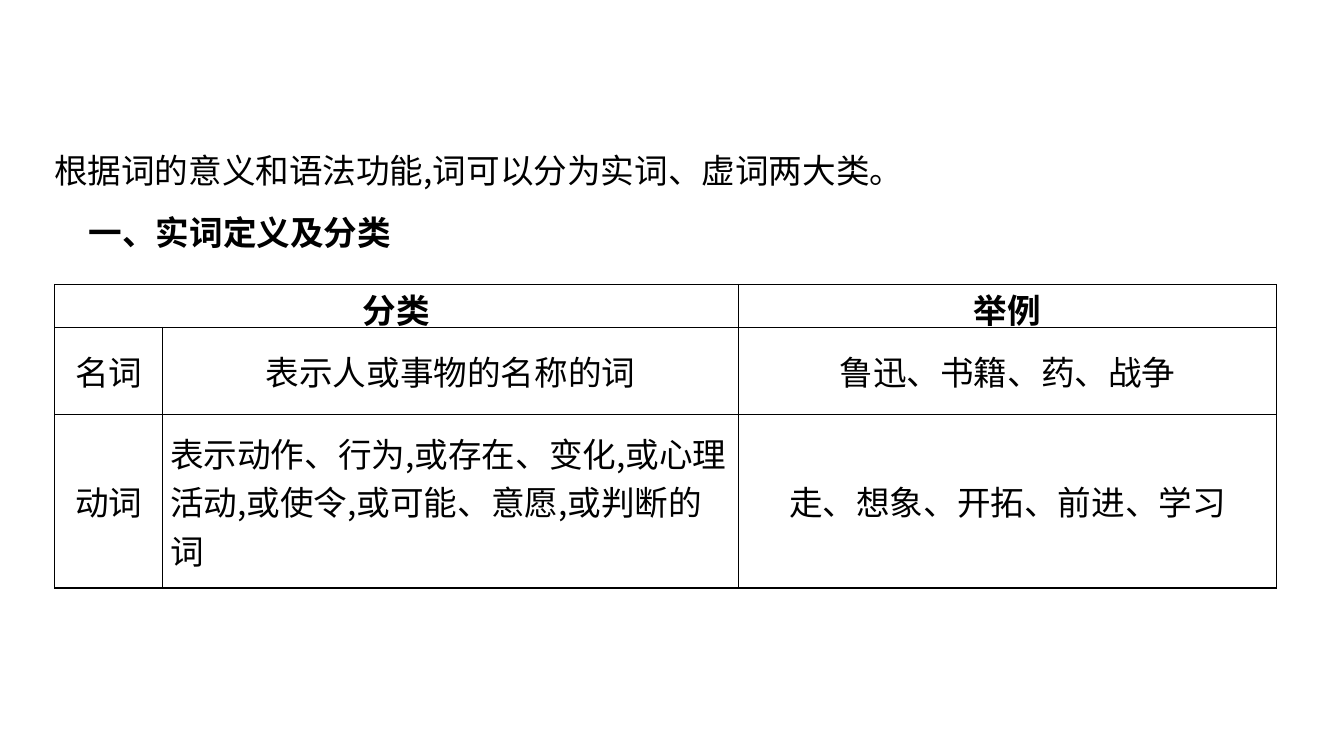
from pptx import Presentation
from pptx.dml.color import RGBColor
from pptx.enum.text import MSO_ANCHOR, MSO_AUTO_SIZE, PP_ALIGN as Align
from pptx.oxml.ns import qn
from pptx.util import Pt
from lxml.etree import SubElement

PX = 9525
THEME = {"font": "Noto Sans CJK SC", "size": Pt(24), "ink": "000000", "rule": Pt(1)}


def style(paragraph, bold=False):
    for run in paragraph.runs:
        run.font.name = THEME["font"]
        run.font.size = THEME["size"]
        run.font.bold = bold
        run.font.color.rgb = RGBColor.from_string(THEME["ink"])
        SubElement(run.font._element, qn("a:ea"), typeface=THEME["font"])


def add_borders(cell):
    properties = cell._tc.get_or_add_tcPr()
    for position, side in enumerate(("lnL", "lnR", "lnT", "lnB")):
        line = properties.makeelement(qn(f"a:{side}"), {"w": str(THEME["rule"])})
        fill = SubElement(line, qn("a:solidFill"))
        SubElement(fill, qn("a:srgbClr"), val=THEME["ink"])
        properties.insert(position, line)


prs = Presentation()
prs.slide_width, prs.slide_height = 1280 * PX, 720 * PX
slide = prs.slides.add_slide(prs.slide_layouts[6])

intro = slide.shapes.add_textbox(42 * PX, 123 * PX, 1024 * PX, 204 * PX).text_frame
intro.word_wrap = True
intro.auto_size = MSO_AUTO_SIZE.SHAPE_TO_FIT_TEXT
statement = intro.paragraphs[0]
statement.text = "根据词的意义和语法功能,词可以分为实词、虚词两大类。"
statement.line_spacing = Pt(40)
style(statement)

heading = intro.add_paragraph()
heading.text = "一、实词定义及分类"
heading.line_spacing = 1.55
indents = heading._p.get_or_add_pPr()
indents.set("marL", str(2 * PX))
indents.set("indent", str(31 * PX))
style(heading, bold=True)

COLUMNS = [103, 548, 513]
ROWS = [41, 83, 165]
WORD_CLASSES = [
    ["分类", "", "举例"],
    ["名词", "表示人或事物的名称的词", "鲁迅、书籍、药、战争"],
    ["动词", "表示动作、行为,或存在、变化,或心理活动,或使令,或可能、意愿,或判断的词",
     "走、想象、开拓、前进、学习"],
]
table = slide.shapes.add_table(
    len(ROWS), len(COLUMNS), 52 * PX, 271 * PX, sum(COLUMNS) * PX, sum(ROWS) * PX
).table
table.first_row = table.horz_banding = False
for column, width in zip(table.columns, COLUMNS):
    column.width = width * PX
for row, height in zip(table.rows, ROWS):
    row.height = height * PX
table.cell(0, 0).merge(table.cell(0, 1))

for r, entries in enumerate(WORD_CLASSES):
    for c, entry in enumerate(entries):
        cell = table.cell(r, c)
        is_definition = r > 0 and c == 1
        cell.margin_left = cell.margin_right = 7 * PX if is_definition else 0
        cell.margin_top = cell.margin_bottom = 0
        cell.vertical_anchor = MSO_ANCHOR.MIDDLE
        cell.fill.background()
        add_borders(cell)
        if entry:
            cell.text_frame.text = entry
            wording = cell.text_frame.paragraphs[0]
            wording.alignment = Align.LEFT if is_definition and r == 2 else Align.CENTER
            style(wording, bold=r == 0)

prs.save("out.pptx")
